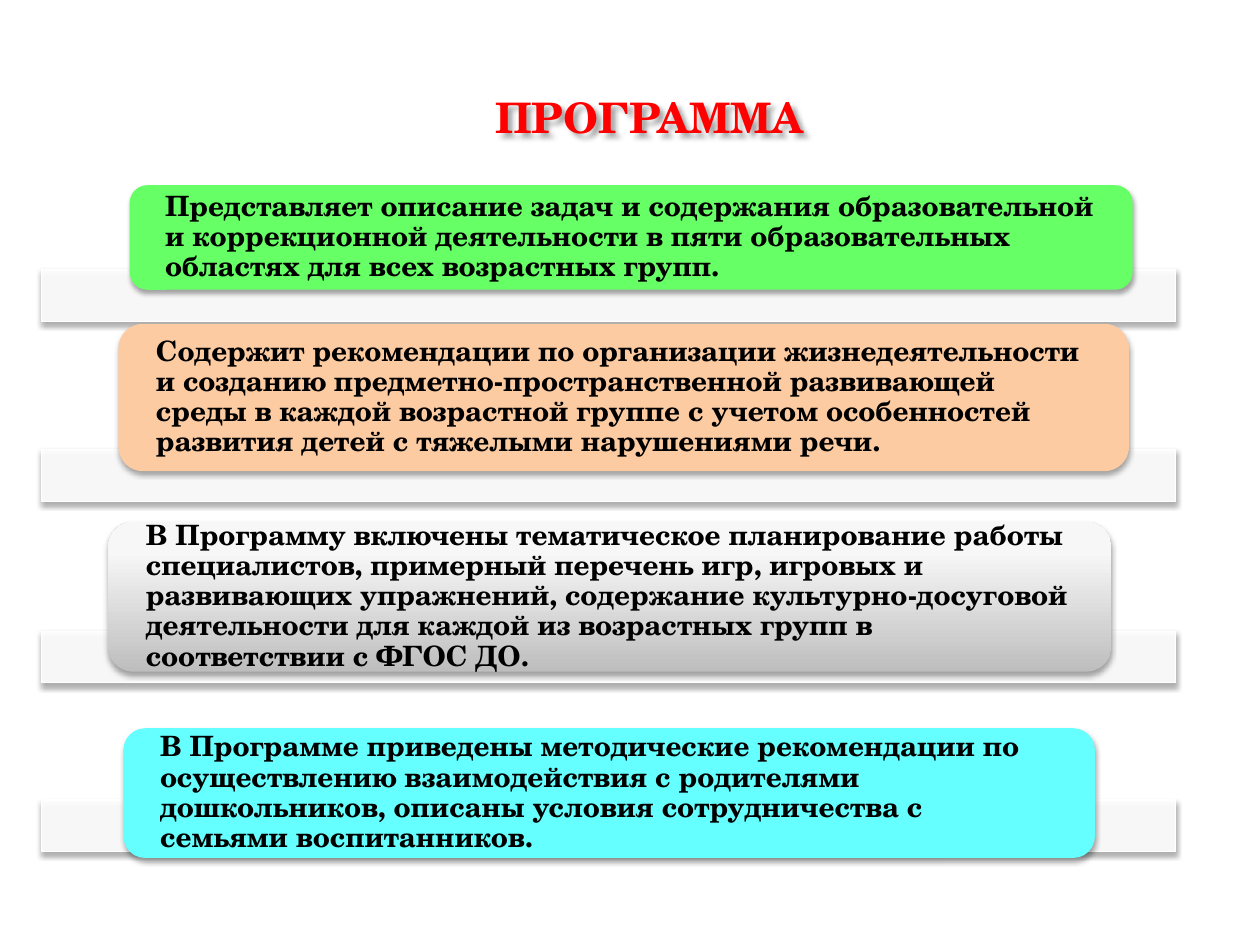
from dataclasses import dataclass
from pptx import Presentation
from pptx.dml.color import RGBColor as RGB
from pptx.enum.shapes import MSO_SHAPE as Kind
from pptx.enum.text import MSO_ANCHOR as Anchor, PP_ALIGN as Align
from pptx.oxml import parse_xml
from pptx.oxml.ns import nsdecls
from pptx.util import Inches, Pt


@dataclass(frozen=True)
class Theme:
    font: str = "TeX Gyre Schola"
    ink: str = "000000"
    head: str = "FF0000"
    bar: str = "FFFFFF"
    head_size: int = 24
    body_size: int = 16


COLS, ROWS = 100, 75
BAR_LEFT, BAR_WIDE, BAR_HIGH = 3.3, 90, 4.1

# Bar top, card box in grid units, fill (two colours make a gradient), text
CARDS = [
    (21.4, (10.3, 14.7, 79.6, 8.3), ["66FF66"],
     "Представляет описание задач и содержания образовательной и коррекционной "
     "деятельности в пяти образовательных областях для всех возрастных групп."),
    (35.7, (9.4, 25.7, 80.2, 11.7), ["FCCBA2"],
     "Содержит рекомендации по организации жизнедеятельности и созданию "
     "предметно-пространственной развивающей среды в каждой возрастной группе "
     "с учетом особенностей развития детей с тяжелыми нарушениями речи."),
    (50.1, (8.6, 41.4, 79.6, 11.9), ["BEBEBE", "F7F7F7"],
     "В Программу включены тематическое планирование работы специалистов, "
     "примерный перечень игр, игровых и развивающих упражнений, содержание "
     "культурно-досуговой деятельности для каждой из возрастных групп в "
     "соответствии с ФГОС ДО."),
    (63.5, (9.8, 57.8, 77.1, 10.3), ["66FFFF"],
     "В Программе приведены методические рекомендации по осуществлению "
     "взаимодействия с родителями дошкольников, описаны условия "
     "сотрудничества с семьями воспитанников."),
]


class Deck:
    def __init__(self, theme):
        self.theme = theme
        self.prs = Presentation()
        self.prs.slide_width, self.prs.slide_height = Inches(10), Inches(7.5)
        self.slide = self.prs.slides.add_slide(self.prs.slide_layouts[6])

    def place(self, left, top, wide, high):
        """Turn grid columns and rows into slide lengths."""
        col, row = self.prs.slide_width / COLS, self.prs.slide_height / ROWS
        return [round(n) for n in (left * col, top * row, wide * col, high * row)]

    def shade(self, shape, blur=3.1, dist=1.8, angle=90):
        """Give the shape a soft black shadow."""
        shape.shadow.inherit = False
        effects = shape._element.spPr.xpath("./a:effectLst")[0]
        effects.append(parse_xml(
            f'<a:outerShdw {nsdecls("a")} blurRad="{Pt(blur)}" dist="{Pt(dist)}" '
            f'dir="{angle * 60000}" rotWithShape="0"><a:srgbClr val="000000">'
            '<a:alpha val="35000"/></a:srgbClr></a:outerShdw>'))

    def label(self, shape, text, size, color, align):
        shape.text_frame.word_wrap = True
        para = shape.text_frame.paragraphs[0]
        para.text, para.alignment = text, align
        font = para.font
        font.name, font.size, font.bold = self.theme.font, Pt(size), True
        font.color.rgb = RGB.from_string(color)
        return para

    def title(self, text, box):
        shape = self.slide.shapes.add_textbox(*self.place(*box))
        self.label(shape, text, self.theme.head_size, self.theme.head, Align.CENTER)
        self.shade(shape, blur=3, dist=3, angle=45)

    def bar(self, top):
        box = self.place(BAR_LEFT, top, BAR_WIDE, BAR_HIGH)
        shape = self.slide.shapes.add_shape(Kind.RECTANGLE, *box)
        color = RGB.from_string(self.theme.bar)
        shape.fill.solid()
        shape.fill.fore_color.rgb = color
        tint = shape._element.spPr.xpath("./a:solidFill/a:srgbClr")[0]
        tint.append(parse_xml(f'<a:alpha {nsdecls("a")} val="90000"/>'))
        shape.line.color.rgb, shape.line.width = color, Pt(0.75)
        self.shade(shape)

    def card(self, box, colors, text):
        shape = self.slide.shapes.add_shape(Kind.ROUNDED_RECTANGLE, *self.place(*box))
        if len(colors) > 1:
            shape.fill.gradient()
            shape.fill.gradient_angle = 90
            for stop, color, spot in zip(shape.fill.gradient_stops, colors, (0, 0.8)):
                stop.color.rgb, stop.position = RGB.from_string(color), spot
        else:
            shape.fill.solid()
            shape.fill.fore_color.rgb = RGB.from_string(colors[0])
        shape.line.fill.background()
        self.shade(shape)
        frame = shape.text_frame
        frame.vertical_anchor = Anchor.MIDDLE
        frame.margin_left = frame.margin_right = Inches(0.24)
        frame.margin_top = frame.margin_bottom = 0
        para = self.label(shape, text, self.theme.body_size, self.theme.ink, Align.LEFT)
        para.line_spacing = 0.9


def main():
    deck = Deck(Theme())
    for top, box, colors, text in CARDS:
        deck.bar(top)
        deck.card(box, colors, text)
    deck.title("ПРОГРАММА", (9.8, 6.8, 83.5, 5))
    deck.prs.save("out.pptx")


if __name__ == "__main__":
    main()
